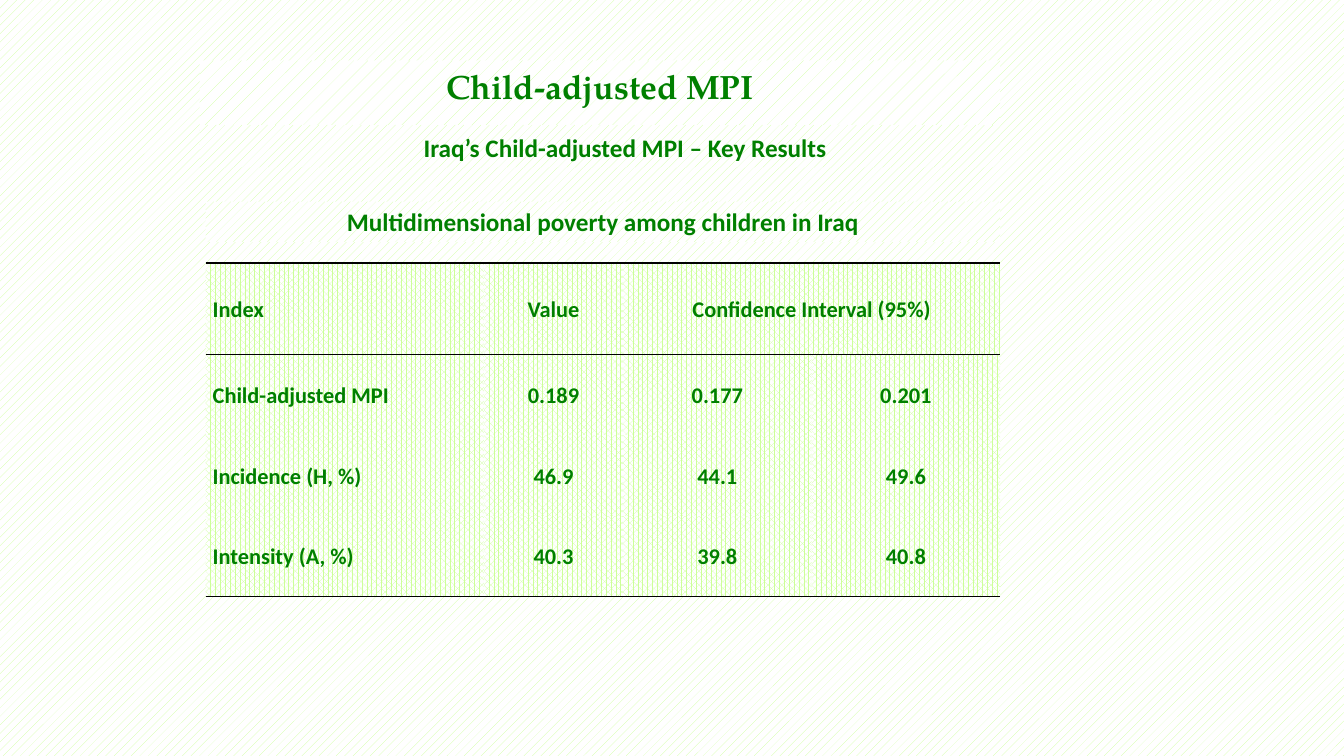
from lxml import etree
from pptx import Presentation
from pptx.dml.color import RGBColor
from pptx.enum.dml import MSO_PATTERN
from pptx.enum.shapes import MSO_SHAPE
from pptx.enum.text import MSO_ANCHOR, MSO_AUTO_SIZE, PP_ALIGN
from pptx.oxml.ns import qn
from pptx.util import Inches, Pt

PCT_5 = MSO_PATTERN.PERCENT_5
PCT_20 = MSO_PATTERN.PERCENT_20
PCT_70 = MSO_PATTERN.PERCENT_70
RECTANGLE = MSO_SHAPE.RECTANGLE
LEFT, CENTER = PP_ALIGN.LEFT, PP_ALIGN.CENTER
TOP, MIDDLE = MSO_ANCHOR.TOP, MSO_ANCHOR.MIDDLE
FIT_SHAPE = MSO_AUTO_SIZE.SHAPE_TO_FIT_TEXT

TEXT_GREEN, PALE_GREEN, WHITE, BLACK = "008000", "CCFF99", "FFFFFF", "000000"
NO_STYLE = "{2D5ABB26-0587-4C30-8999-92F81FD0307C}"
COLUMN_WIDTHS = [2.76, 1.38, 1.87, 1.87]
ROW_HEIGHTS = [0.91, 0.8, 0.8, 0.8]
RESULTS = [
    ["Index", "Value", "Confidence Interval (95%)", ""],
    ["Child-adjusted MPI", "0.189", "0.177", "0.201"],
    ["Incidence (H, %)", "46.9", "44.1", "49.6"],
    ["Intensity (A, %)", "40.3", "39.8", "40.8"],
]


def color(value):
    return RGBColor.from_string(value)


def fill_pattern(fill, pattern):
    fill.patterned()
    fill.pattern = pattern
    fill.fore_color.rgb = color(PALE_GREEN)
    fill.back_color.rgb = color(WHITE)


def write(frame, text, size, align, font="Calibri"):
    frame.text = text
    paragraph = frame.paragraphs[0]
    paragraph.alignment = align
    for run in paragraph.runs:
        run.font.name = font
        run.font.size = Pt(size)
        run.font.bold = True
        run.font.color.rgb = color(TEXT_GREEN)
    return paragraph


def fit_frame(shape):
    frame = shape.text_frame
    frame.word_wrap = True
    frame.auto_size = FIT_SHAPE
    frame.vertical_anchor = TOP
    return frame


def add_title(slide, left, top, width, height):
    title = slide.shapes.title
    title.left, title.top = Inches(left), Inches(top)
    title.width, title.height = Inches(width), Inches(height)
    fill_pattern(title.fill, PCT_5)
    write(fit_frame(title), "Child-adjusted MPI", 24, CENTER, "TeX Gyre Pagella")


def add_heading(slide, text, left, top, width, height):
    heading = slide.shapes.add_shape(
        RECTANGLE, Inches(left), Inches(top), Inches(width), Inches(height))
    heading.shadow.inherit = False
    heading.line.fill.background()
    fill_pattern(heading.fill, PCT_20)
    return write(fit_frame(heading), text, 18, CENTER)


def add_border(cell, side):
    """Draw a thin rule on one side; borders come before the cell's fill."""
    border = etree.Element(qn("a:" + side), w=str(Pt(1)))
    solid = etree.SubElement(border, qn("a:solidFill"))
    etree.SubElement(solid, qn("a:srgbClr"), val=BLACK)
    cell._tc.get_or_add_tcPr().insert(0, border)


def add_results_table(slide, left, top, width, height):
    frame = slide.shapes.add_table(
        len(RESULTS), len(COLUMN_WIDTHS),
        Inches(left), Inches(top), Inches(width), Inches(height))
    table = frame.table
    table.horz_banding = False
    table._tbl.tblPr.find(qn("a:tableStyleId")).text = NO_STYLE
    for column, column_width in zip(table.columns, COLUMN_WIDTHS):
        column.width = Inches(column_width)
    for row, row_height in zip(table.rows, ROW_HEIGHTS):
        row.height = Inches(row_height)
    table.cell(0, 2).merge(table.cell(0, 3))

    last_row = len(RESULTS) - 1
    for r, values in enumerate(RESULTS):
        for c, value in enumerate(values):
            cell = table.cell(r, c)
            cell.margin_left = cell.margin_right = Inches(0.07)
            cell.margin_top = cell.margin_bottom = 0
            cell.vertical_anchor = MIDDLE
            fill_pattern(cell.fill, PCT_70)
            # Rules above and below the header, and below the last row
            if r in (0, last_row):
                add_border(cell, "lnB")
            if r == 0:
                add_border(cell, "lnT")
            if not cell.is_spanned:
                paragraph = write(cell.text_frame, value, 16, CENTER if c else LEFT)
                paragraph.line_spacing = 1.07


def build_results_slide(prs):
    slide = prs.slides.add_slide(prs.slide_layouts[5])
    fill_pattern(slide.background.fill, PCT_20)

    # Title and headings
    add_title(slide, 1.98, 0.6, 7.94, 0.5)
    key_results = add_heading(
        slide, "Iraq’s Child-adjusted MPI – Key Results", 1.98, 1.24, 7.94, 0.42)
    key_results.level = 1
    key_results.line_spacing = 1.07
    key_results.space_before = Pt(2)
    indent = key_results._p.get_or_add_pPr()
    indent.set("marL", str(Inches(0.5)))
    indent.set("indent", "0")
    table_heading = add_heading(
        slide, "Multidimensional poverty among children in Iraq", 2.04, 2, 7.88, 0.4)
    table_heading.space_after = Pt(6)

    # Index values with their confidence intervals
    add_results_table(slide, 2.04, 2.61, sum(COLUMN_WIDTHS), sum(ROW_HEIGHTS))


def main():
    prs = Presentation()
    prs.slide_width, prs.slide_height = Inches(13.33), Inches(7.5)
    build_results_slide(prs)
    prs.save("out.pptx")


if __name__ == "__main__":
    main()
